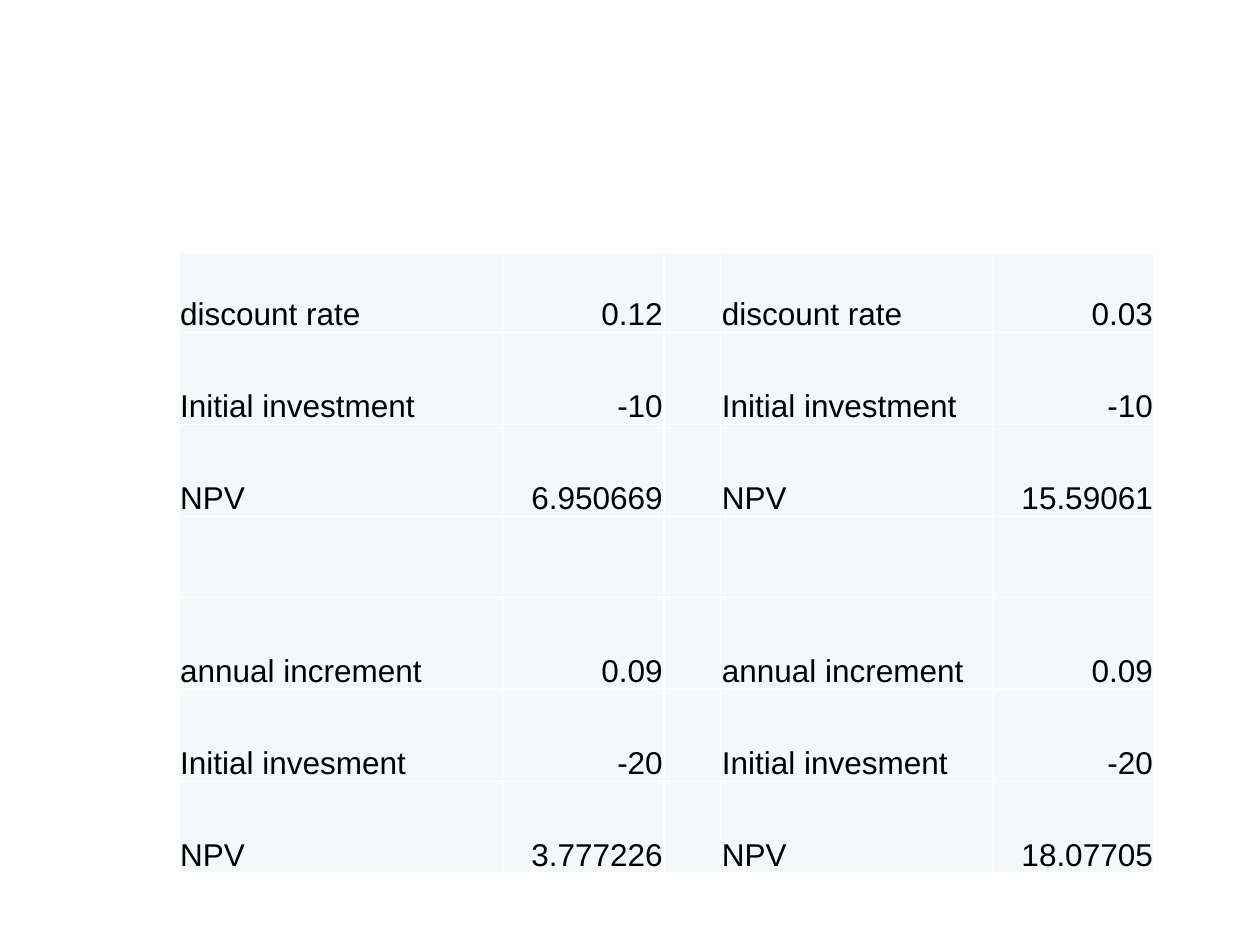
from dataclasses import dataclass

from lxml import etree
from pptx import Presentation
from pptx.dml.color import RGBColor
from pptx.enum.text import MSO_ANCHOR, PP_ALIGN
from pptx.oxml.ns import qn
from pptx.util import Inches, Pt

BOTTOM = MSO_ANCHOR.BOTTOM
LEFT, RIGHT = PP_ALIGN.LEFT, PP_ALIGN.RIGHT
BLANK_LAYOUT = 6


@dataclass(frozen=True)
class Theme:
    font: str = "Arial"
    size: int = 18
    text: str = "000000"
    cell: str = "F3F9FA"
    border: str = "FFFFFF"
    border_width: int = 1


THEME = Theme()

COLUMN_WIDTHS = [2.57, 1.28, 0.45, 2.16, 1.28]
ROW_HEIGHTS = [0.64, 0.73, 0.73, 0.64, 0.73, 0.73, 0.73]
VALUE_COLUMNS = (1, 4)

# Label, value at the high discount rate, value at the low one
NPV_ROWS = [
    ("discount rate", "0.12", "0.03"),
    ("Initial investment", "-10", "-10"),
    ("NPV", "6.950669", "15.59061"),
    ("", "", ""),
    ("annual increment", "0.09", "0.09"),
    ("Initial invesment", "-20", "-20"),
    ("NPV", "3.777226", "18.07705"),
]


def add_borders(cell):
    """Draw all four sides; call before filling, as the schema puts lines first."""
    properties = cell._tc.get_or_add_tcPr()
    for side in ("a:lnL", "a:lnR", "a:lnT", "a:lnB"):
        line = etree.SubElement(properties, qn(side), w=str(Pt(THEME.border_width)))
        fill = etree.SubElement(line, qn("a:solidFill"))
        etree.SubElement(fill, qn("a:srgbClr"), val=THEME.border)


def format_cell(cell, text, alignment):
    add_borders(cell)
    cell.fill.solid()
    cell.fill.fore_color.rgb = RGBColor.from_string(THEME.cell)
    layout = {
        "vertical_anchor": BOTTOM,
        "margin_left": Inches(0.01),
        "margin_top": Inches(0.01),
        "margin_right": Inches(0.01),
        "margin_bottom": 0,
    }
    for name, value in layout.items():
        setattr(cell, name, value)

    cell.text = text
    paragraph = cell.text_frame.paragraphs[0]
    paragraph.alignment = alignment
    paragraph.font.size = Pt(THEME.size)
    for run in paragraph.runs:
        run.font.name = THEME.font
        run.font.size = Pt(THEME.size)
        run.font.color.rgb = RGBColor.from_string(THEME.text)


def add_npv_table(slide):
    table = slide.shapes.add_table(
        len(NPV_ROWS), len(COLUMN_WIDTHS),
        Inches(1.42), Inches(2),
        Inches(sum(COLUMN_WIDTHS)), Inches(sum(ROW_HEIGHTS)),
    ).table
    table.first_row = table.horz_banding = False
    for column, width in zip(table.columns, COLUMN_WIDTHS):
        column.width = Inches(width)
    for row, height in zip(table.rows, ROW_HEIGHTS):
        row.height = Inches(height)

    for row, (label, high_rate, low_rate) in zip(table.rows, NPV_ROWS):
        texts = (label, high_rate, "", label, low_rate)
        for index, (cell, text) in enumerate(zip(row.cells, texts)):
            format_cell(cell, text, RIGHT if index in VALUE_COLUMNS else LEFT)


def main():
    presentation = Presentation()
    presentation.slide_width = Inches(10)
    presentation.slide_height = Inches(7.5)
    slide = presentation.slides.add_slide(presentation.slide_layouts[BLANK_LAYOUT])
    add_npv_table(slide)
    presentation.save("out.pptx")


if __name__ == "__main__":
    main()
